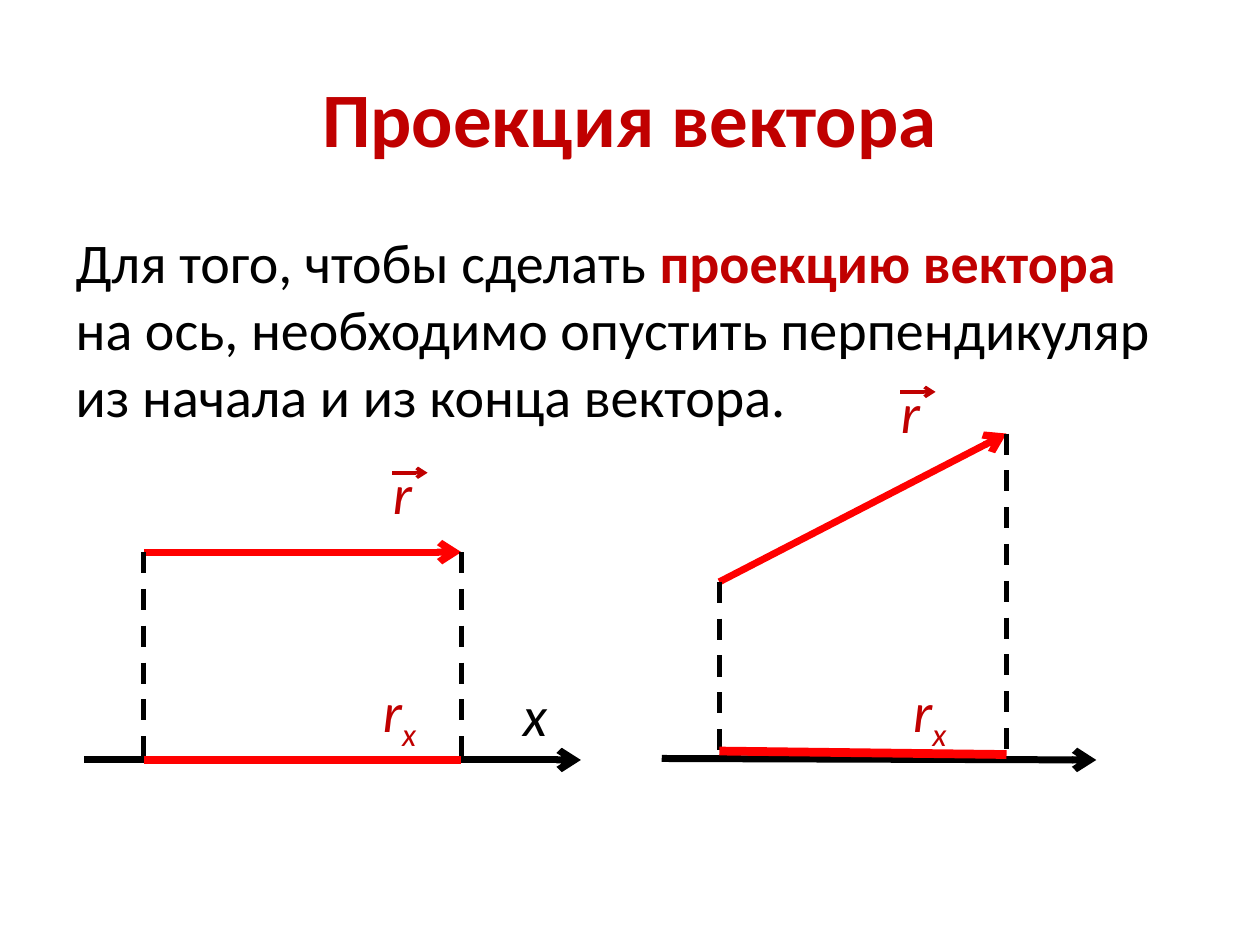
from dataclasses import dataclass

from lxml import etree
from pptx import Presentation
from pptx import util as u
from pptx.dml.color import RGBColor
from pptx.enum import dml, shapes, text
from pptx.oxml.ns import qn


@dataclass(frozen=True)
class Theme:
    font: str = "Calibri"
    dark: str = "C00000"
    red: str = "FF0000"
    black: str = "000000"
    head: int = 44
    body: int = 32


THEME = Theme()


def add_run(para, words, color, size=THEME.body, bold=False, slant=False):
    run = para.add_run()
    run.text = words
    font = run.font
    font.name, font.size = THEME.font, u.Pt(size)
    font.bold, font.italic = bold, slant
    font.color.rgb = RGBColor.from_string(color)
    return run


def place(shape, left, top, width, height):
    shape.left, shape.top = u.Cm(left), u.Cm(top)
    shape.width, shape.height = u.Cm(width), u.Cm(height)


def add_line(slide, start, end, color, width, dash=False, arrow=False):
    line = slide.shapes.add_connector(
        shapes.MSO_CONNECTOR.STRAIGHT, *[u.Cm(v) for v in (*start, *end)])
    line.line.color.rgb = RGBColor.from_string(color)
    line.line.width = u.Pt(width)
    if dash:
        line.line.dash_style = dml.MSO_LINE.DASH
    if arrow:
        tail = etree.SubElement(line.line._get_or_add_ln(), qn("a:tailEnd"))
        tail.set("type", "arrow")
    etree.SubElement(line._element.spPr, qn("a:effectLst"))


def add_label(slide, left, top, letter, color, sub=""):
    box = slide.shapes.add_textbox(u.Cm(left), u.Cm(top), u.Cm(1.8), u.Cm(1.63))
    frame = box.text_frame
    frame.word_wrap = True
    frame.auto_size = text.MSO_AUTO_SIZE.SHAPE_TO_FIT_TEXT
    para = frame.paragraphs[0]
    add_run(para, letter, color, slant=True)
    if sub:
        run = add_run(para, sub, color, slant=True)
        run._r.get_or_add_rPr().set("baseline", "-25000")


def add_vector_name(slide, left, top):
    """Letter r with a small arrow above it."""
    add_label(slide, left, top, "r", THEME.dark)
    x, y = left + 0.24, top + 0.41
    add_line(slide, (x, y), (x + 0.71, y), THEME.dark, 2, arrow=True)


def add_drawing(slide, axis, vector, feet, bar, name, shade):
    """Axis, vector, two perpendiculars and the projection on the axis."""
    add_line(slide, *axis, THEME.black, 4, arrow=True)
    add_line(slide, *vector, THEME.red, 4, arrow=True)
    for point, foot in zip(vector, feet):
        add_line(slide, point, (point[0], foot), THEME.black, 3, dash=True)
    ends = [(point[0], y) for point, y in zip(vector, bar)]
    add_line(slide, *ends, THEME.red, 5)
    add_vector_name(slide, *name)
    add_label(slide, *shade, "r", THEME.dark, sub="x")


def add_title(slide):
    title = slide.shapes.title
    place(title, 1.27, 0.76, 22.86, 3.18)
    title.text_frame.vertical_anchor = text.MSO_ANCHOR.MIDDLE
    para = title.text_frame.paragraphs[0]
    para.alignment = text.PP_ALIGN.CENTER
    add_run(para, "Проекция вектора", THEME.dark, THEME.head, bold=True)


def add_body(slide):
    body = slide.placeholders[1]
    place(body, 1.27, 4.45, 22.86, 12.57)
    para = body.text_frame.paragraphs[0]
    props = para._p.get_or_add_pPr()
    props.set("marL", "0")
    props.set("indent", "0")
    etree.SubElement(props, qn("a:buNone"))
    add_run(para, "Для того, чтобы сделать ", THEME.black)
    add_run(para, "проекцию вектора ", THEME.dark, bold=True)
    add_run(para, "на ось, необходимо опустить перпендикуляр "
                  "из начала и из конца вектора.", THEME.black)


def main():
    deck = Presentation()
    deck.slide_width, deck.slide_height = u.Cm(25.4), u.Cm(19.05)
    slide = deck.slides.add_slide(deck.slide_layouts[1])
    add_title(slide)
    add_body(slide)

    # Vector parallel to the axis
    add_drawing(slide,
                axis=((1.7, 15.32), (11.71, 15.32)),
                vector=((2.9, 11.13), (9.3, 11.13)),
                feet=(15.32, 15.32), bar=(15.32, 15.32),
                name=(7.67, 9.12), shade=(7.47, 13.51))
    add_label(slide, 10.29, 13.59, "x", THEME.black)

    # Vector at an angle to the axis
    add_drawing(slide,
                axis=((13.34, 15.29), (22.1, 15.32)),
                vector=((14.5, 11.73), (20.29, 8.74)),
                feet=(15.29, 15.21), bar=(15.14, 15.21),
                name=(17.91, 7.49), shade=(18.16, 13.51))

    deck.save("out.pptx")


if __name__ == "__main__":
    main()
